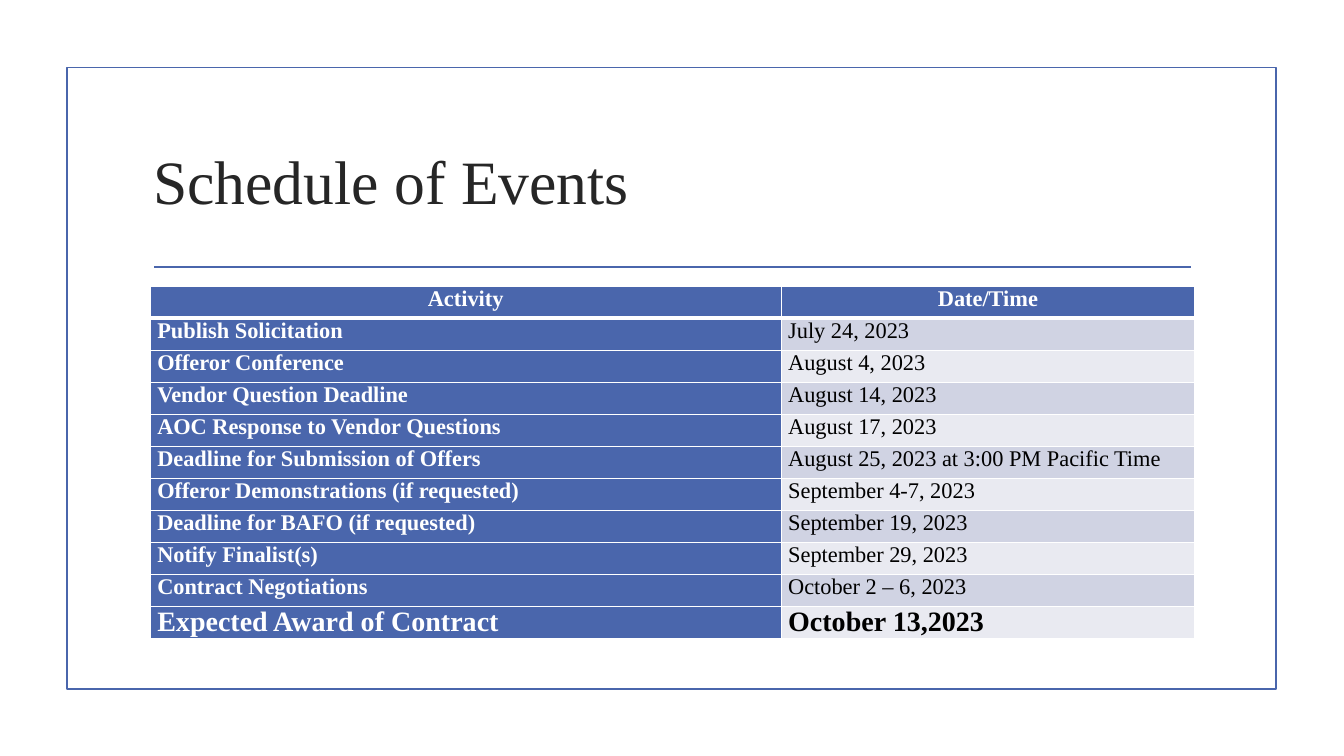
from lxml import etree
from pptx import Presentation
from pptx import util as u
from pptx.dml.color import RGBColor
from pptx.enum import shapes, text
from pptx.oxml import ns

BLUE = RGBColor(0x4A, 0x66, 0xAC)
BAND_DARK = RGBColor(0xD0, 0xD3, 0xE3)
BAND_LIGHT = RGBColor(0xE9, 0xEA, 0xF1)
INK = RGBColor(0x26, 0x26, 0x26)
BLACK = RGBColor(0, 0, 0)
WHITE = RGBColor(0xFF, 0xFF, 0xFF)
FONT = "Times New Roman"

WIDTH, HEIGHT = u.Inches(13.33), u.Inches(7.5)
ACTIVITY_SHARE = 0.604

EVENTS = [
    ("Activity", "Date/Time"),
    ("Publish Solicitation", "July 24, 2023"),
    ("Offeror Conference", "August 4, 2023"),
    ("Vendor Question Deadline", "August 14, 2023"),
    ("AOC Response to Vendor Questions", "August 17, 2023"),
    ("Deadline for Submission of Offers", "August 25, 2023 at 3:00 PM Pacific Time"),
    ("Offeror Demonstrations (if requested)", "September 4-7, 2023"),
    ("Deadline for BAFO (if requested)", "September 19, 2023"),
    ("Notify Finalist(s)", "September 29, 2023"),
    ("Contract Negotiations", "October 2 – 6, 2023"),
    ("Expected Award of Contract", "October 13,2023"),
]


def percent_box(x, y, w, h):
    return (int(WIDTH * x / 100), int(HEIGHT * y / 100),
            int(WIDTH * w / 100), int(HEIGHT * h / 100))


def add_run(p, words, size, color, bold=False):
    r = p.add_run()
    r.text = words
    r.font.name = FONT
    r.font.size = u.Pt(size)
    r.font.bold = bold
    r.font.color.rgb = color


def add_frame(s, box):
    sp = s.shapes.add_shape(shapes.MSO_SHAPE.RECTANGLE, *box)
    sp.shadow.inherit = False
    sp.fill.background()
    sp.line.color.rgb = BLUE
    sp.line.width = u.Pt(1.25)


def add_rule(s, box):
    x, y, w, h = box
    sp = s.shapes.add_connector(shapes.MSO_CONNECTOR.STRAIGHT, x, y, x + w, y + h)
    sp.line.color.rgb = BLUE
    sp.line.width = u.Pt(1.25)
    etree.SubElement(sp._element.spPr, ns.qn("a:effectLst"))


def add_title(s, box):
    sp = s.shapes.title
    sp.left, sp.top, sp.width, sp.height = box
    tf = sp.text_frame
    tf.word_wrap = True
    tf.vertical_anchor = text.MSO_ANCHOR.MIDDLE
    p = tf.paragraphs[0]
    p.alignment = text.PP_ALIGN.LEFT
    add_run(p, "Schedule of Events", 44, INK)


def set_borders(cell, bottom):
    tcPr = cell._tc.get_or_add_tcPr()
    for i, (side, points) in enumerate(zip("LRTB", (1, 1, 1, bottom))):
        ln = etree.Element(ns.qn("a:ln" + side), w=str(u.Pt(points)))
        fill = etree.SubElement(ln, ns.qn("a:solidFill"))
        etree.SubElement(fill, ns.qn("a:srgbClr"), val=str(WHITE))
        tcPr.insert(i, ln)


def fill_cell(cell, words, row, col):
    header, award = row == 0, row == len(EVENTS) - 1
    on_blue = header or col == 0
    band = BAND_DARK if row % 2 else BAND_LIGHT
    cell.fill.solid()
    cell.fill.fore_color.rgb = BLUE if on_blue else band
    cell.margin_left = cell.margin_right = u.Inches(0.07)
    cell.margin_top = cell.margin_bottom = 0
    set_borders(cell, 3 if header else 1)
    p = cell.text_frame.paragraphs[0]
    p.alignment = text.PP_ALIGN.CENTER if header else text.PP_ALIGN.LEFT
    p.space_after = u.Pt(6)
    add_run(p, words, 20 if award else 16, WHITE if on_blue else BLACK, on_blue or award)


def add_schedule(s, box):
    table = s.shapes.add_table(len(EVENTS), 2, *box).table
    table.columns[0].width = int(box[2] * ACTIVITY_SHARE)
    table.columns[1].width = box[2] - table.columns[0].width
    for row, event in enumerate(EVENTS):
        table.rows[row].height = box[3] // len(EVENTS)
        for col, words in enumerate(event):
            fill_cell(table.cell(row, col), words, row, col)


def main():
    prs = Presentation()
    prs.slide_width, prs.slide_height = WIDTH, HEIGHT
    s = prs.slides.add_slide(prs.slide_layouts[5])
    add_frame(s, percent_box(4.97, 8.93, 90, 82.27))
    add_rule(s, percent_box(11.48, 35.33, 77.12, 0))
    add_title(s, percent_box(10.65, 14.27, 78.77, 19.07))
    add_schedule(s, percent_box(11.18, 37.87, 77.72, 46.6))
    prs.save("out.pptx")


if __name__ == "__main__":
    main()
